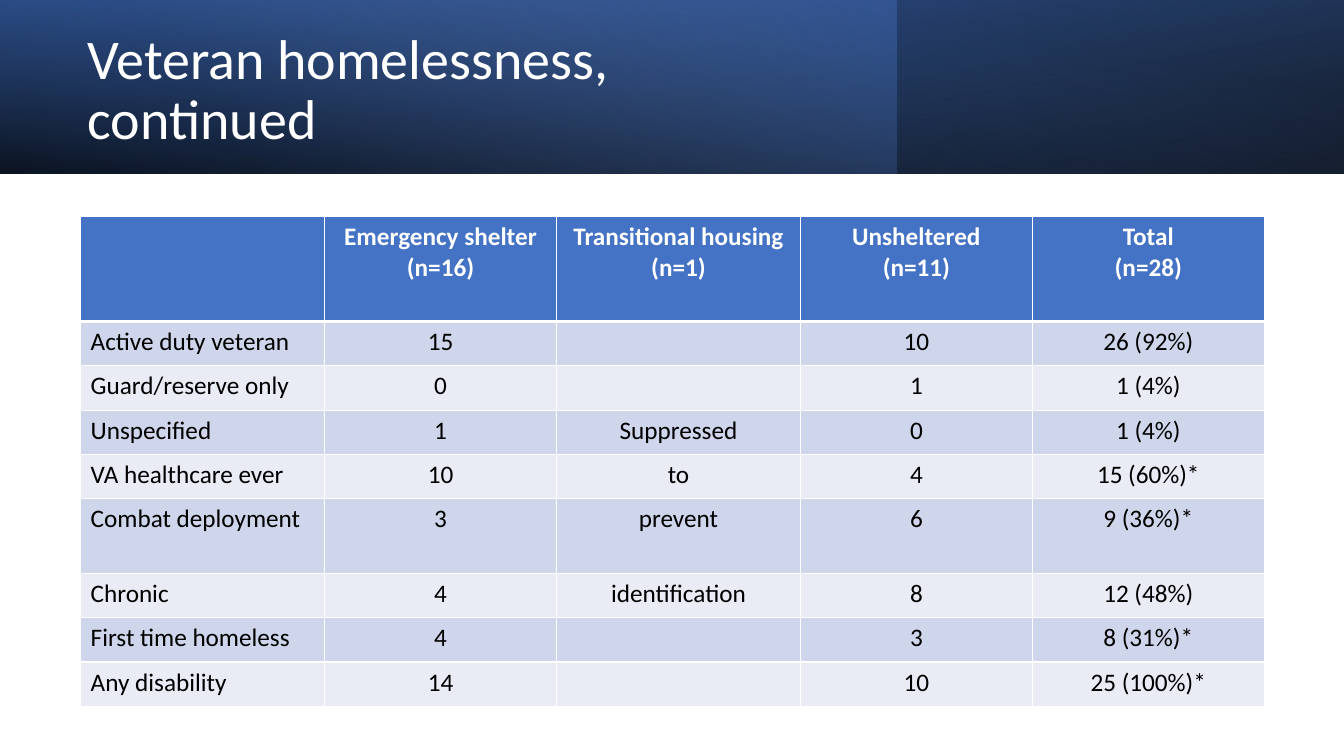
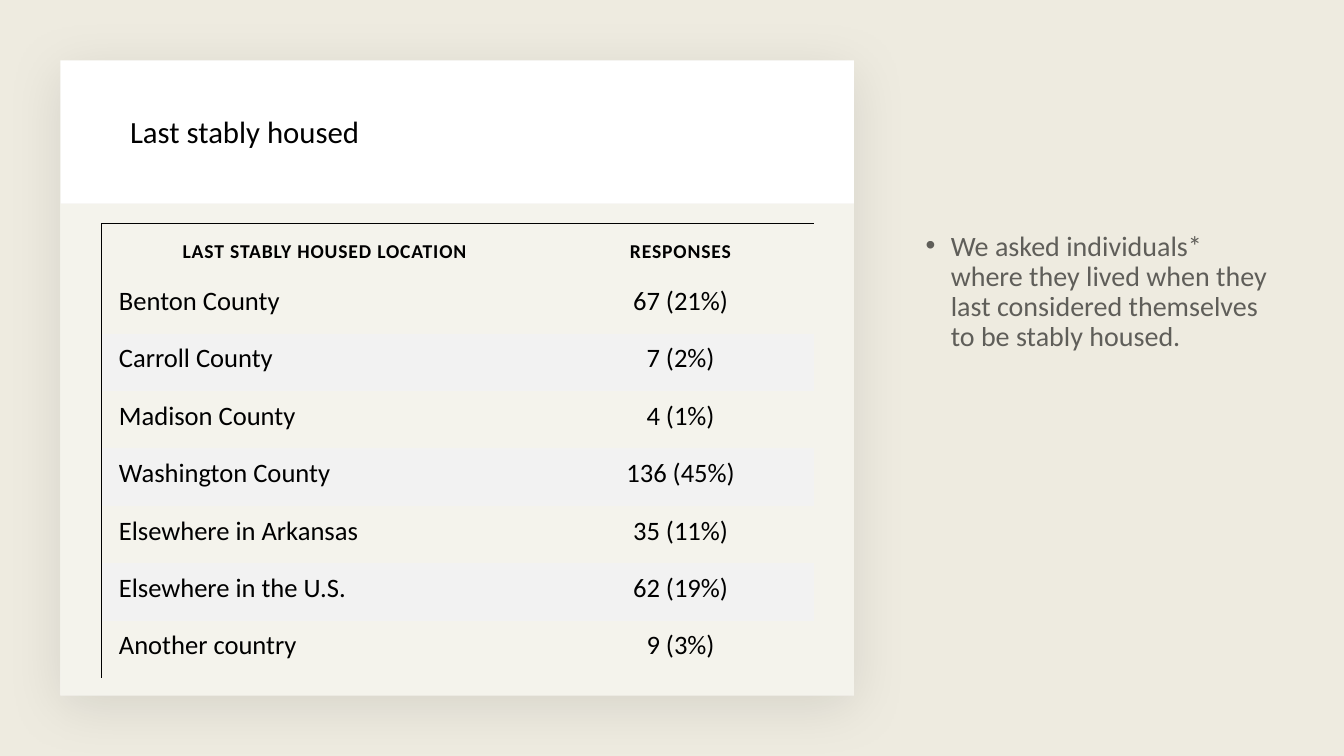
"""Build two slides about homelessness survey results."""
from lxml import etree
from pptx import Presentation
from pptx.dml.color import RGBColor
from pptx.enum.shapes import MSO_SHAPE
from pptx.enum.text import MSO_ANCHOR, MSO_AUTO_SIZE, PP_ALIGN
from pptx.oxml.ns import qn
from pptx.util import Inches, Pt

RECTANGLE = MSO_SHAPE.RECTANGLE
TOP, MIDDLE, BOTTOM = MSO_ANCHOR.TOP, MSO_ANCHOR.MIDDLE, MSO_ANCHOR.BOTTOM
LEFT, CENTER = PP_ALIGN.LEFT, PP_ALIGN.CENTER
NO_AUTOFIT = MSO_AUTO_SIZE.NONE

FONT = "Calibri"
BLACK = RGBColor(0x00, 0x00, 0x00)
WHITE = RGBColor(0xFF, 0xFF, 0xFF)
BLUE = RGBColor(0x44, 0x72, 0xC4)
DARK_BLUE = RGBColor(0x2F, 0x55, 0x97)
LIGHT_BLUE = RGBColor(0x8F, 0xAA, 0xDC)
BAND_DARK = RGBColor(0xCF, 0xD5, 0xEA)
BAND_LIGHT = RGBColor(0xE9, 0xEB, 0xF5)
GREY = RGBColor(0xF2, 0xF2, 0xF2)
GOLD = RGBColor(0xBF, 0x90, 0x00)

SLIDE_WIDTH, SLIDE_HEIGHT = 13.33, 7.5
BAND_HEIGHT = 1.72
EDGES = ("L", "R", "T", "B")

VETERAN_ROWS = [
    ("", "Emergency shelter\n(n=16)", "Transitional housing\n(n=1)",
     "Unsheltered\n(n=11)", "Total\n(n=28)"),
    ("Active duty veteran", "15", "", "10", "26 (92%)"),
    ("Guard/reserve only", "0", "", "1", "1 (4%)"),
    ("Unspecified", "1", "Suppressed", "0", "1 (4%)"),
    ("VA healthcare ever", "10", "to", "4", "15 (60%)*"),
    ("Combat deployment", "3", "prevent", "6", "9 (36%)*"),
    ("Chronic", "4", "identification", "8", "12 (48%)"),
    ("First time homeless", "4", "", "3", "8 (31%)*"),
    ("Any disability", "14", "", "10", "25 (100%)*"),
]
HOUSED_ROWS = [
    ("LAST STABLY HOUSED LOCATION", "RESPONSES"),
    ("Benton County", "67 (21%)"),
    ("Carroll County", "7 (2%)"),
    ("Madison County", "4 (1%)"),
    ("Washington County", "136 (45%)"),
    ("Elsewhere in Arkansas", "35 (11%)"),
    ("Elsewhere in the U.S.", "62 (19%)"),
    ("Another country", "9 (3%)"),
]


def set_alphas(element, *percents):
    """Give the colours inside an element their opacities, in order."""
    for colour, percent in zip(list(element.iter(qn("a:srgbClr"))), percents):
        etree.SubElement(colour, qn("a:alpha")).set("val", str(percent * 1000))


def add_rectangle(slide, box, color=None, alpha=100):
    """Add a rectangle without outline or shadow, filled if a colour is given."""
    shape = slide.shapes.add_shape(RECTANGLE, *map(Inches, box))
    shape.shadow.inherit = False
    shape.line.fill.background()
    if color is not None:
        shape.fill.solid()
        shape.fill.fore_color.rgb = color
        set_alphas(shape._element.spPr, alpha)
    return shape


def add_gradient(slide, width, stops, angle, rotation=0, flip=False):
    """Add a title band layer; stops are (position, colour, opacity)."""
    shape = add_rectangle(slide, (0, 0, width, BAND_HEIGHT))
    shape.rotation = rotation
    if flip:
        shape._element.spPr.get_or_add_xfrm().set("flipH", "1")
    shape.fill.gradient()
    shape.fill.gradient_angle = 360 - angle
    for gradient_stop, (position, color, _) in zip(shape.fill.gradient_stops, stops):
        gradient_stop.position = position
        gradient_stop.color.rgb = color
    set_alphas(shape._element.spPr, *(alpha for _, _, alpha in stops))


def add_soft_shadow(shape):
    """Add a wide, faint shadow below a shape."""
    effects = shape._element.spPr.find(qn("a:effectLst"))
    shadow = etree.SubElement(effects, qn("a:outerShdw"))
    settings = {"blurRad": Pt(40), "dist": Pt(8), "dir": 90 * 60000}
    for name, value in settings.items():
        shadow.set(name, str(int(value)))
    shadow.set("algn", "t")
    shadow.set("rotWithShape", "0")
    etree.SubElement(shadow, qn("a:srgbClr")).set("val", str(BLACK))
    set_alphas(shadow, 10)


def style_text(text_frame, size, color, align, bold=False):
    """Format every paragraph and run of a text frame."""
    for paragraph in text_frame.paragraphs:
        paragraph.alignment = align
        for run in paragraph.runs:
            run.font.name = FONT
            run.font.size = Pt(size)
            run.font.bold = bold
            run.font.color.rgb = color


def fill_placeholder(slide, placeholder, box, text, size, color, anchor=TOP):
    """Place a placeholder in front and set its text."""
    slide.shapes._spTree.append(placeholder._element)
    placeholder.left, placeholder.top, placeholder.width, placeholder.height = map(Inches, box)
    text_frame = placeholder.text_frame
    text_frame.text = text
    text_frame.word_wrap = True
    text_frame.auto_size = NO_AUTOFIT
    text_frame.vertical_anchor = anchor
    paragraph = text_frame.paragraphs[0]
    paragraph.line_spacing = 0.9
    paragraph.space_before = Pt(0)
    style_text(text_frame, size, color, LEFT)
    return paragraph


def add_bullet(paragraph):
    """Give a paragraph a round bullet with a hanging indent."""
    properties = paragraph._p.get_or_add_pPr()
    properties.set("marL", str(Inches(0.25)))
    properties.set("indent", str(Inches(-0.25)))
    etree.SubElement(properties, qn("a:buFont")).set("typeface", "Arial")
    etree.SubElement(properties, qn("a:buChar")).set("char", "•")


def set_borders(cell, color, widths):
    """Draw the edges that have a width and clear the others."""
    properties = cell._tc.get_or_add_tcPr()
    for edge in EDGES:
        line = etree.SubElement(properties, qn(f"a:ln{edge}"))
        if edge in widths:
            line.set("w", str(Pt(widths[edge])))
            fill = etree.SubElement(line, qn("a:solidFill"))
            etree.SubElement(fill, qn("a:srgbClr")).set("val", str(color))
        else:
            etree.SubElement(line, qn("a:noFill"))


def add_table(slide, left, top, widths, heights, rows, style_cell):
    """Add a table and style each cell with the given function."""
    frame = slide.shapes.add_table(len(rows), len(widths), Inches(left), Inches(top),
                                   Inches(sum(widths)), Inches(sum(heights)))
    table = frame.table
    table.horz_banding = False
    table.first_row = False
    for column, width in zip(table.columns, widths):
        column.width = Inches(width)
    for row, height in zip(table.rows, heights):
        row.height = Inches(height)
    for row_index, values in enumerate(rows):
        for column_index, value in enumerate(values):
            cell = table.cell(row_index, column_index)
            cell.text_frame.text = value
            style_cell(cell, row_index, column_index)


def set_margins(cell, left, top, right, bottom):
    """Set the inner margins of a cell in inches."""
    cell.margin_left, cell.margin_top = Inches(left), Inches(top)
    cell.margin_right, cell.margin_bottom = Inches(right), Inches(bottom)


def style_veteran_cell(cell, row, column):
    """Style a cell of the blue banded table."""
    header = row == 0
    widths = dict.fromkeys(EDGES, 1)
    if header:
        widths["B"] = 3
    elif row == 1:
        widths["T"] = 3
    set_borders(cell, WHITE, widths)
    cell.fill.solid()
    cell.fill.fore_color.rgb = BLUE if header else (BAND_LIGHT, BAND_DARK)[row % 2]
    style_text(cell.text_frame, 18, WHITE if header else BLACK,
               CENTER if header or column else LEFT, header)


def style_housed_cell(cell, row, column):
    """Style a cell of the table with a top and a left rule."""
    header = row == 0
    widths = {}
    if column == 0:
        widths["L"] = 1
    if header:
        widths["T"] = 1
    set_borders(cell, BLACK, widths)
    if row and row % 2 == 0:
        cell.fill.solid()
        cell.fill.fore_color.rgb = GREY
    else:
        cell.fill.background()
    style_text(cell.text_frame, 14 if header else 19, BLACK,
               CENTER if header or column else LEFT, header)
    if header:
        set_margins(cell, 0.26, 0.12, 0.26, 0.12)
        cell.vertical_anchor = BOTTOM
        for run in cell.text_frame.paragraphs[0].runs:
            run.font._element.set("spc", "60")
    else:
        set_margins(cell, 0.17, 0.09, 0.17, 0.12)


def build_veteran_slide(presentation):
    """Build the slide with the veteran table."""
    slide = presentation.slides.add_slide(presentation.slide_layouts[5])
    add_gradient(slide, SLIDE_WIDTH, [(0, BLACK, 96), (1, DARK_BLUE, 100)], 100, 180, True)
    add_gradient(slide, 8.89, [(0, BLUE, 41), (0.74, LIGHT_BLUE, 0)], 140)
    add_gradient(slide, SLIDE_WIDTH, [(0, BLACK, 63), (0.78, BLUE, 15)], 260, flip=True)
    fill_placeholder(slide, slide.shapes.title, (0.77, 0.27, 7.72, 1.27),
                     "Veteran homelessness, continued", 40, WHITE, MIDDLE)
    heights = [1.04] + [0.44] * 4 + [0.74] + [0.44] * 3
    add_table(slide, 0.8, 2.15, [2.42, 2.3, 2.42, 2.3, 2.3], heights,
              VETERAN_ROWS, style_veteran_cell)


def build_housed_slide(presentation):
    """Build the slide with the last stably housed table."""
    slide = presentation.slides.add_slide(presentation.slide_layouts[1])
    page = (0, 0, SLIDE_WIDTH, SLIDE_HEIGHT)
    panel = (0.6, 2.02, 7.87, 4.88)
    add_rectangle(slide, page, GREY)
    add_rectangle(slide, page, GOLD, 7)
    add_soft_shadow(add_rectangle(slide, (0.6, 0.6, 7.87, 6.3), WHITE))
    for color, alpha in ((GREY, 100), (GOLD, 7), (WHITE, 40)):
        add_rectangle(slide, panel, color, alpha)
    fill_placeholder(slide, slide.shapes.title, (1.19, 1.11, 6.69, 0.59),
                     "Last stably housed", 22, BLACK)
    paragraph = fill_placeholder(
        slide, slide.placeholders[1], (9.08, 2.25, 3.66, 4.14),
        "We asked individuals* where they lived when they last considered "
        "themselves to be stably housed.", 20, BLACK)
    add_bullet(paragraph)
    set_alphas(paragraph._p, 60)
    add_table(slide, 1.01, 2.22, [4.42, 2.64], [0.52] + [0.57] * 7,
              HOUSED_ROWS, style_housed_cell)


def main():
    """Build and save the presentation."""
    presentation = Presentation()
    presentation.slide_width = Inches(SLIDE_WIDTH)
    presentation.slide_height = Inches(SLIDE_HEIGHT)
    build_veteran_slide(presentation)
    build_housed_slide(presentation)
    presentation.save("out.pptx")


if __name__ == "__main__":
    main()
